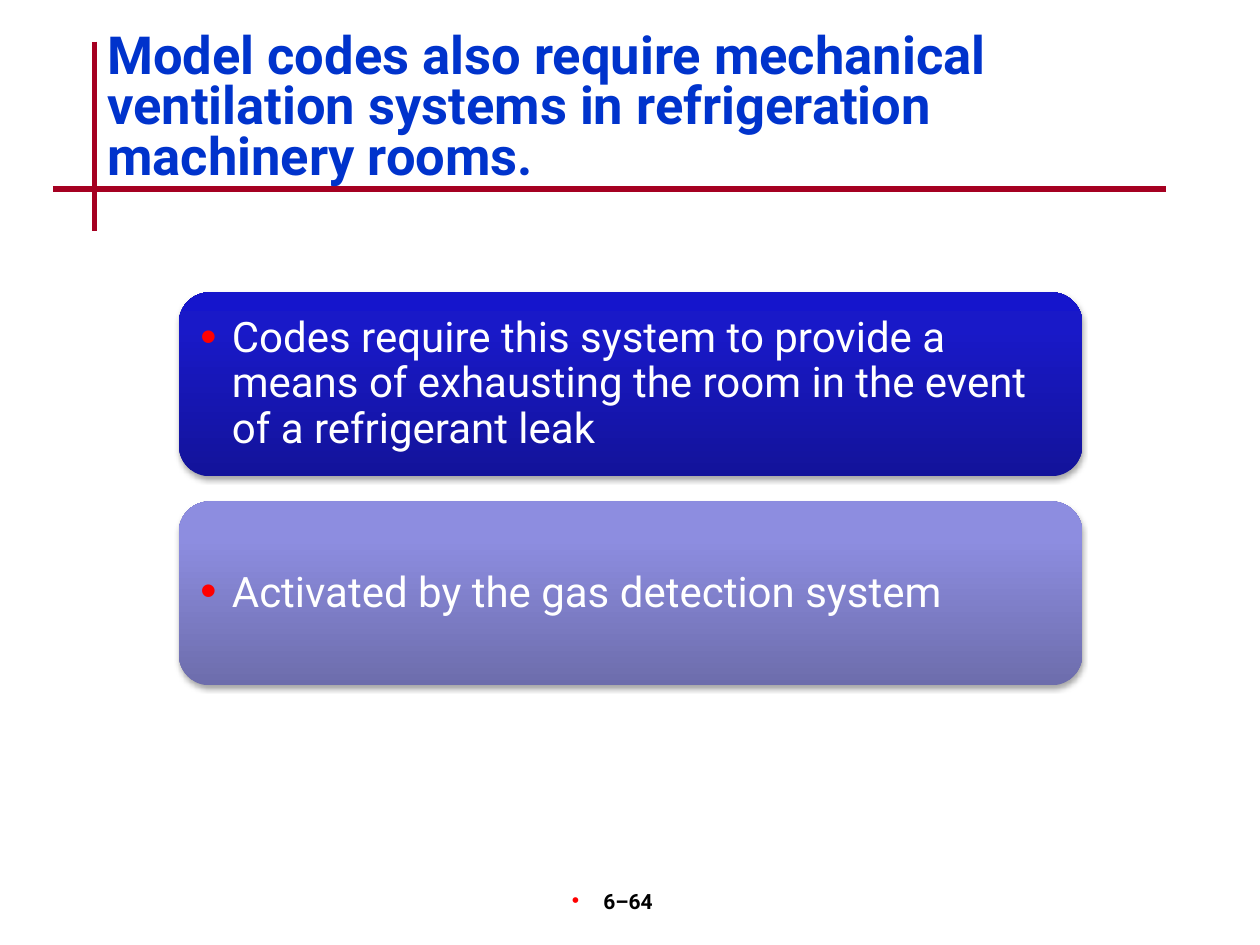
from dataclasses import dataclass

from lxml.etree import SubElement
from pptx import Presentation
from pptx.dml.color import RGBColor
from pptx.enum.shapes import MSO_CONNECTOR, MSO_SHAPE
from pptx.enum.text import MSO_ANCHOR, MSO_AUTO_SIZE, PP_ALIGN
from pptx.oxml import parse_xml
from pptx.oxml.ns import nsdecls, qn
from pptx.util import Inches, Pt

FONT = "Roboto"
TITLE_BLUE = RGBColor(0x00, 0x33, 0xCC)
RULE_RED = RGBColor(0xA5, 0x00, 0x21)
BULLET_RED = RGBColor(0xFF, 0x00, 0x00)
WHITE = RGBColor(0xFF, 0xFF, 0xFF)
BLACK = RGBColor(0x00, 0x00, 0x00)

CARD_LEFT, CARD_TOP, CARD_WIDTH, CARD_HEIGHT = 1.42, 2.32, 7.17, 1.46
CARD_PITCH = 1.66
CARD_PADDING = 0.07


@dataclass
class Card:
    text: str
    gradient: tuple[RGBColor, RGBColor, RGBColor]  # from bottom to top


CARDS = [
    Card("Codes require this system to provide a means of exhausting the room "
         "in the event of a refrigerant leak",
         (RGBColor(0x13, 0x13, 0x9A), RGBColor(0x19, 0x19, 0xC8), RGBColor(0x15, 0x15, 0xCC))),
    Card("Activated by the gas detection system",
         (RGBColor(0x6D, 0x6D, 0xAC), RGBColor(0x8D, 0x8D, 0xE0), RGBColor(0x8C, 0x8C, 0xE2))),
]


def place(shape, left: float, top: float, width: float, height: float) -> None:
    shape.left, shape.top = Inches(left), Inches(top)
    shape.width, shape.height = Inches(width), Inches(height)


def bring_to_front(shape) -> None:
    shape.element.getparent().append(shape.element)


def add_bullet(paragraph, size_percent: int) -> None:
    properties = paragraph._p.get_or_add_pPr()
    properties.set("marL", str(Inches(0.25)))
    properties.set("indent", str(-Inches(0.25)))
    color = SubElement(properties, qn("a:buClr"))
    SubElement(color, qn("a:srgbClr"), val=str(BULLET_RED))
    SubElement(properties, qn("a:buSzPct"), val=str(size_percent * 1000))
    SubElement(properties, qn("a:buFont"), typeface="Arial")
    SubElement(properties, qn("a:buChar"), char="•")


def write_text(shape, text: str, *, size: int, color: RGBColor, bold: bool = False,
               align=PP_ALIGN.LEFT, anchor=MSO_ANCHOR.TOP, line_spacing: float = 1.0,
               insets: tuple = (0.1, 0.05, 0.1, 0.05), bullet_percent: int = 0) -> None:
    frame = shape.text_frame
    frame.word_wrap = True
    frame.auto_size = MSO_AUTO_SIZE.NONE
    frame.vertical_anchor = anchor
    (frame.margin_left, frame.margin_top,
     frame.margin_right, frame.margin_bottom) = map(Inches, insets)
    paragraph = frame.paragraphs[0]
    paragraph.alignment = align
    paragraph.line_spacing = line_spacing
    paragraph.space_before = Pt(0)
    if bullet_percent:
        add_bullet(paragraph, bullet_percent)
    run = paragraph.add_run()
    run.text = text
    run.font.name, run.font.size, run.font.bold = FONT, Pt(size), bold
    run.font.color.rgb = color


def add_rule(slide, start: tuple[float, float], end: tuple[float, float]) -> None:
    rule = slide.shapes.add_connector(MSO_CONNECTOR.STRAIGHT, *map(Inches, start + end))
    rule.line.color.rgb = RULE_RED
    rule.line.width = Pt(3)
    SubElement(rule.element.spPr, qn("a:effectLst"))


def add_card(slide, card: Card, body, top: float) -> None:
    panel = slide.shapes.add_shape(
        MSO_SHAPE.ROUNDED_RECTANGLE,
        *map(Inches, (CARD_LEFT, top, CARD_WIDTH, CARD_HEIGHT)))
    panel.line.fill.background()

    # Three-stop gradient running upwards
    stops = "".join(f'<a:gs pos="{position}"><a:srgbClr val="{color}"/></a:gs>'
                    for position, color in zip((0, 80000, 100000), card.gradient))
    panel.element.spPr.find(qn("a:prstGeom")).addnext(parse_xml(
        f'<a:gradFill {nsdecls("a")} rotWithShape="1"><a:gsLst>{stops}</a:gsLst>'
        '<a:lin ang="16200000" scaled="0"/></a:gradFill>'))

    # Soft shadow below the panel
    panel.shadow.inherit = False
    panel.element.spPr.find(qn("a:effectLst")).append(parse_xml(
        f'<a:outerShdw {nsdecls("a")} blurRad="{Pt(3.1)}" dist="{Pt(1.8)}" dir="5400000" '
        'rotWithShape="0"><a:srgbClr val="000000"><a:alpha val="35000"/></a:srgbClr>'
        '</a:outerShdw>'))

    # Bulleted text on the panel
    place(body, CARD_LEFT + CARD_PADDING, top + CARD_PADDING,
          CARD_WIDTH - 2 * CARD_PADDING, CARD_HEIGHT - 2 * CARD_PADDING)
    write_text(body, card.text, size=24, color=WHITE, anchor=MSO_ANCHOR.MIDDLE,
               line_spacing=0.9, insets=(0.1,) * 4, bullet_percent=110)
    bring_to_front(body)


def main() -> None:
    presentation = Presentation()
    presentation.slide_width, presentation.slide_height = Inches(10), Inches(7.5)
    slide = presentation.slides.add_slide(presentation.slide_layouts[3])
    title, *bodies = slide.placeholders

    # Crossed rules beside and below the title
    add_rule(slide, (0.75, 0.33), (0.75, 1.83))
    add_rule(slide, (0.42, 1.5), (9.25, 1.5))

    # Page number
    page_number = slide.shapes.add_textbox(*map(Inches, (3.92, 7, 2.08, 0.5)))
    write_text(page_number, "6–64", size=12, color=BLACK, bold=True,
               align=PP_ALIGN.CENTER, insets=(0, 0.05, 0.2, 0.05), bullet_percent=100)

    # Title
    place(title, 0.75, 0.22, 8.67, 1)
    write_text(title, "Model codes also require mechanical ventilation systems in "
               "refrigeration machinery rooms.",
               size=30, color=TITLE_BLUE, bold=True, line_spacing=0.8)
    bring_to_front(title)

    # Cards
    for row, (card, body) in enumerate(zip(CARDS, bodies)):
        add_card(slide, card, body, CARD_TOP + row * CARD_PITCH)

    presentation.save("out.pptx")


if __name__ == "__main__":
    main()
